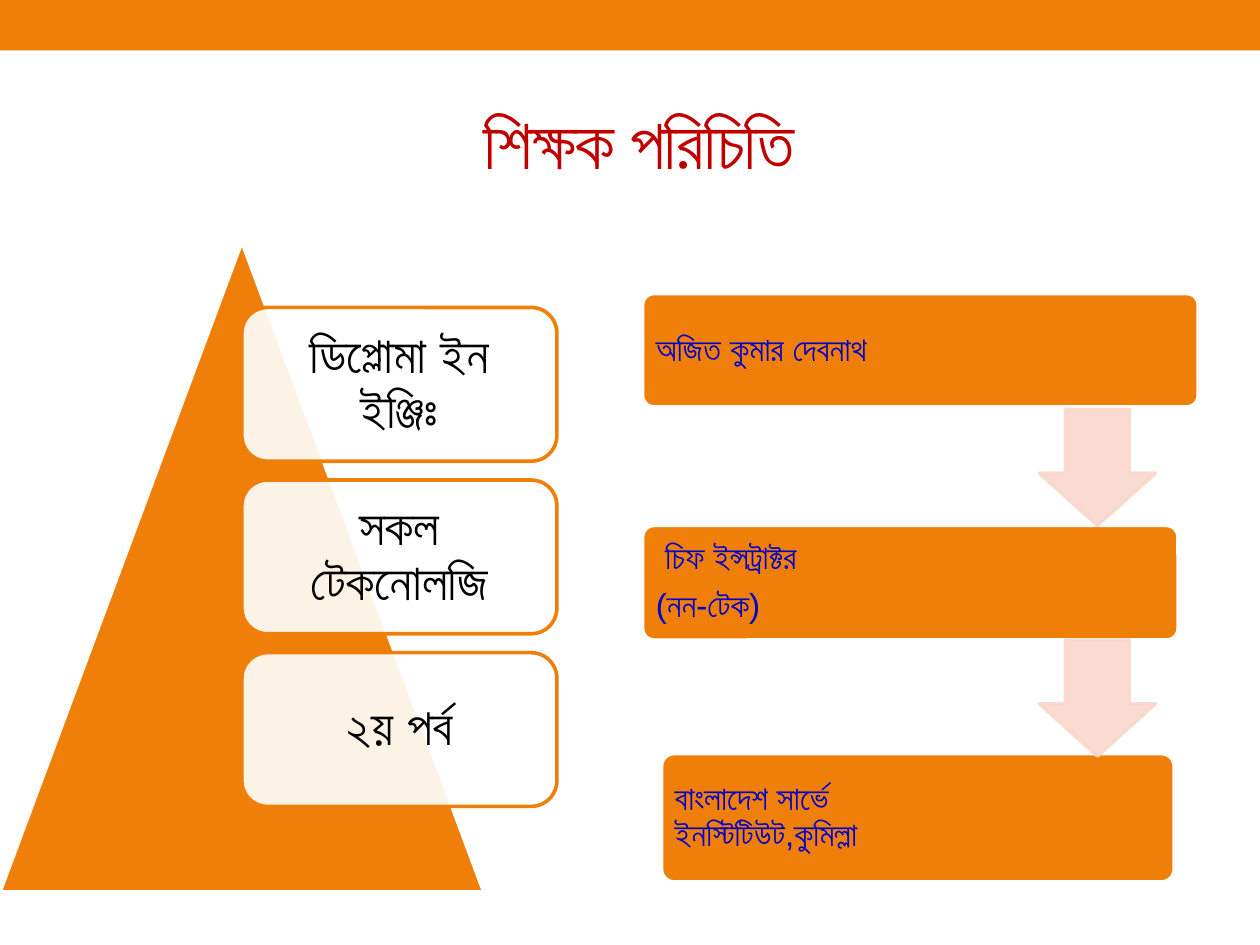
from lxml.etree import SubElement
from pptx import Presentation
from pptx.dml.color import RGBColor
from pptx.enum.shapes import MSO_SHAPE as Preset
from pptx.enum.text import MSO_ANCHOR as Anchor, PP_ALIGN as Align
from pptx.oxml.ns import qn
from pptx.util import Inches, Pt

COLUMNS, ROWS = 100, 75
ORANGE, WHITE, PINK = "F07F09", "FFFFFF", "F9D8CC"
RED, BLUE, BLACK = "C00000", "0000CC", "000000"


def rgb(code):
    return RGBColor.from_string(code)


def paint(fill, code, opacity=100):
    fill.solid()
    fill.fore_color.rgb = rgb(code)
    if opacity < 100:
        color = fill._xPr.find(qn("a:solidFill"))[0]
        SubElement(color, qn("a:alpha")).set("val", str(opacity * 1000))


class SlideBuilder:
    """Draws on one slide; boxes are (column, row, columns, rows)."""

    font_name = "Arial"
    outline_width = Pt(2.08)

    def __init__(self, presentation):
        self.cell_width = presentation.slide_width / COLUMNS
        self.cell_height = presentation.slide_height / ROWS
        self.slide = presentation.slides.add_slide(presentation.slide_layouts[6])

    def place(self, box):
        left, top, width, height = box
        return (round(left * self.cell_width), round(top * self.cell_height),
                round(width * self.cell_width), round(height * self.cell_height))

    def shape(self, preset, box, fill, line=None, opacity=100,
              line_opacity=100, adjustments=()):
        shape = self.slide.shapes.add_shape(preset, *self.place(box))
        shape.shadow.inherit = False
        paint(shape.fill, fill, opacity)
        if line:
            paint(shape.line.fill, line, line_opacity)
            shape.line.width = self.outline_width
        else:
            shape.line.fill.background()
        for index, value in enumerate(adjustments):
            shape.adjustments[index] = value

    def text(self, box, lines, size, color, align=Align.LEFT, inset=None,
             line_spacing=None, after_share=0, tracking=None):
        """Add a text box; after_share is space after as a share of size."""
        frame = self.slide.shapes.add_textbox(*self.place(box)).text_frame
        frame.word_wrap = True
        frame.vertical_anchor = Anchor.MIDDLE
        if inset is not None:
            frame.margin_left = frame.margin_right = Inches(inset)
            frame.margin_top = frame.margin_bottom = Inches(inset)
        for index, line in enumerate(lines):
            paragraph = frame.add_paragraph() if index else frame.paragraphs[0]
            paragraph.alignment = align
            paragraph.line_spacing = line_spacing
            paragraph.space_after = Pt(size * after_share)
            run = paragraph.add_run()
            run.text = line
            run.font.size = Pt(size)
            run.font.name = self.font_name
            run.font.color.rgb = rgb(color)
            properties = run.font._element
            SubElement(properties, qn("a:cs")).set("typeface", self.font_name)
            if tracking is not None:
                properties.set("spc", str(tracking * 100))

    def course_card(self, row, label):
        self.shape(Preset.ROUNDED_RECTANGLE, (19.2, row, 25, 12.2),
                   WHITE, ORANGE, opacity=90)
        self.text((19.8, row + 0.6, 23.8, 11), [label], 29, BLACK,
                  Align.CENTER, 0.12, 0.9, 0.35)

    def teacher_card(self, box, text_width, lines):
        left, top, _, height = box
        self.shape(Preset.ROUNDED_RECTANGLE, box, ORANGE, WHITE, adjustments=(0.1,))
        self.text((left + 0.25, top + 0.25, text_width, height - 0.5), lines,
                  19, BLUE, inset=0.08, line_spacing=0.9, after_share=0.35)

    def step_arrow(self, row):
        self.shape(Preset.DOWN_ARROW, (82.5, row, 9.2, 9.2), PINK, PINK,
                   opacity=90, line_opacity=90, adjustments=(0.55, 0.45))


def main():
    presentation = Presentation()
    presentation.slide_width, presentation.slide_height = Inches(10), Inches(7.5)
    builder = SlideBuilder(presentation)

    builder.shape(Preset.RECTANGLE, (0, 0, COLUMNS, 4), ORANGE)
    builder.text((5, 5.8, 90, 10.8), [" শিক্ষক পরিচিতি"], 40, RED,
                 Align.CENTER, tracking=-1)

    builder.shape(Preset.ISOSCELES_TRIANGLE, (0, 19.2, 38.4, 51.6), ORANGE, WHITE)
    courses = ["ডিপ্লোমা ইন ইঞ্জিঃ", "সকল টেকনোলজি", "২য় পর্ব"]
    for index, label in enumerate(courses):
        builder.course_card(24.4 + 13.7 * index, label)

    teacher_cards = [
        ((51, 23.3, 44.1, 9), 26.5, ["অজিত কুমার দেবনাথ"]),
        ((51, 41.7, 42.5, 9.1), 27.8, [" চিফ ইন্সট্রাক্টর", "(নন-টেক)"]),
        ((52.5, 59.8, 40.7, 10.2), 26.5, ["বাংলাদেশ সার্ভে ইনস্টিটিউট,কুমিল্লা"]),
    ]
    for box, text_width, lines in teacher_cards:
        builder.teacher_card(box, text_width, lines)
    for row in (32.5, 50.8):
        builder.step_arrow(row)

    presentation.save("out.pptx")


if __name__ == "__main__":
    main()
